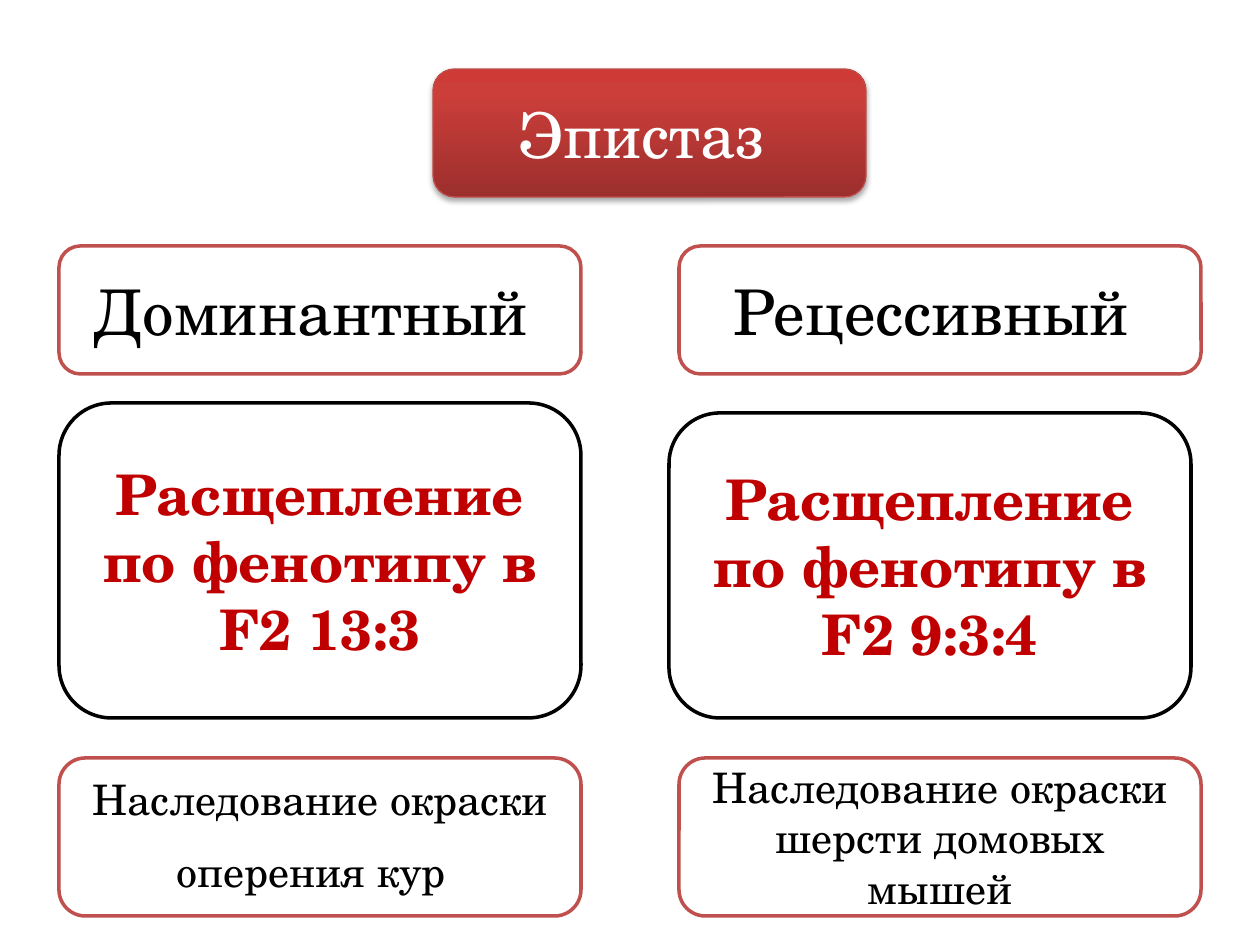
import copy

import pptx
import pptx.dml.color
import pptx.enum.shapes
import pptx.enum.text
import pptx.oxml
import pptx.oxml.ns
import pptx.util

RGBColor = pptx.dml.color.RGBColor
WHITE = RGBColor(0xFF, 0xFF, 0xFF)
BLACK = RGBColor(0x00, 0x00, 0x00)
RED = RGBColor(0xC0, 0x50, 0x4D)
HEADER_LINE = RGBColor(0xBF, 0x4C, 0x48)
CRIMSON = RGBColor(0xC0, 0x00, 0x00)
HEADER_STOPS = [
    (0, RGBColor(0x9C, 0x2F, 0x2D)),
    (0.8, RGBColor(0xCB, 0x3E, 0x3A)),
    (1, RGBColor(0xCE, 0x3B, 0x37)),
]
EMU_PER_INCH = 914400
PX_PER_INCH = 126
BOX_WIDTH = 522
LEFT, RIGHT = 59, 679
KIND = {"size": 36, "color": BLACK, "bold": False}
RATIO = {"size": 32, "color": CRIMSON, "bold": True}
EXAMPLE = {"size": 24, "color": BLACK, "bold": False}
HEADER = {"size": 36, "color": WHITE, "bold": False}


def px(length):
    return pptx.util.Emu(round(length * EMU_PER_INCH / PX_PER_INCH))


class Board:
    """Draws rounded boxes in one style on the current slide."""

    font_name = "TeX Gyre Schola"

    def __init__(self, slide):
        self.slide = slide

    def add_run(self, paragraph, text, style):
        run = paragraph.add_run()
        run.text = text
        values = {
            "name": self.font_name,
            "size": pptx.util.Pt(style["size"]),
            "bold": style["bold"],
        }
        for name, value in values.items():
            setattr(run.font, name, value)
        run.font.color.rgb = style["color"]

    def box(self, left, top, width, height, runs, line_color, line_width=2):
        shape = self.slide.shapes.add_shape(
            pptx.enum.shapes.MSO_SHAPE.ROUNDED_RECTANGLE,
            px(left), px(top), px(width), px(height),
        )
        shape.shadow.inherit = False
        shape.fill.solid()
        shape.fill.fore_color.rgb = WHITE
        shape.line.color.rgb = line_color
        shape.line.width = pptx.util.Pt(line_width)
        frame = shape.text_frame
        frame.word_wrap = True
        frame.vertical_anchor = pptx.enum.text.MSO_ANCHOR.MIDDLE
        paragraph = frame.paragraphs[0]
        paragraph.alignment = pptx.enum.text.PP_ALIGN.CENTER
        for text, style in runs:
            self.add_run(paragraph, text, style)
        return shape

    def header(self, left, top, width, height, text):
        shape = self.box(left, top, width, height, [(text, HEADER)], HEADER_LINE, 0.75)
        shape.fill.gradient()
        shape.fill.gradient_angle = 90
        properties = shape._element.spPr
        stop_list = properties.find(".//" + pptx.oxml.ns.qn("a:gsLst"))
        stop_list.append(copy.deepcopy(stop_list[-1]))
        for stop, (position, color) in zip(shape.fill.gradient_stops, HEADER_STOPS):
            stop.position = position
            stop.color.rgb = color
        shadow = pptx.oxml.parse_xml(
            f'<a:outerShdw {pptx.oxml.ns.nsdecls("a")} blurRad="40000" dist="23000" '
            'dir="5400000" rotWithShape="0"><a:srgbClr val="000000">'
            '<a:alpha val="35000"/></a:srgbClr></a:outerShdw>'
        )
        properties.find(pptx.oxml.ns.qn("a:effectLst")).append(shadow)


def main():
    presentation = pptx.Presentation()
    presentation.slide_width = px(1260)
    presentation.slide_height = px(945)
    board = Board(presentation.slides.add_slide(presentation.slide_layouts[6]))
    board.header(433, 69, 433, 128, "Эпистаз ")
    boxes = [
        (LEFT, 246, 128, [("Доминантный ", KIND)], RED),
        (RIGHT, 246, 128, [("Рецессивный ", KIND)], RED),
        (LEFT, 403, 315, [("Расщепление по фенотипу в F2 13:3", RATIO)], BLACK),
        (RIGHT - 10, 413, 305, [("Расщепление по фенотипу в F2 9:3:4", RATIO)], BLACK),
        (LEFT, 758, 158, [("Наследование окраски оперения кур", EXAMPLE), (" ", KIND)], RED),
        (RIGHT, 758, 158, [("Наследование окраски шерсти домовых мышей", EXAMPLE)], RED),
    ]
    for left, top, height, runs, line_color in boxes:
        board.box(left, top, BOX_WIDTH, height, runs, line_color)
    presentation.save("out.pptx")


if __name__ == "__main__":
    main()
